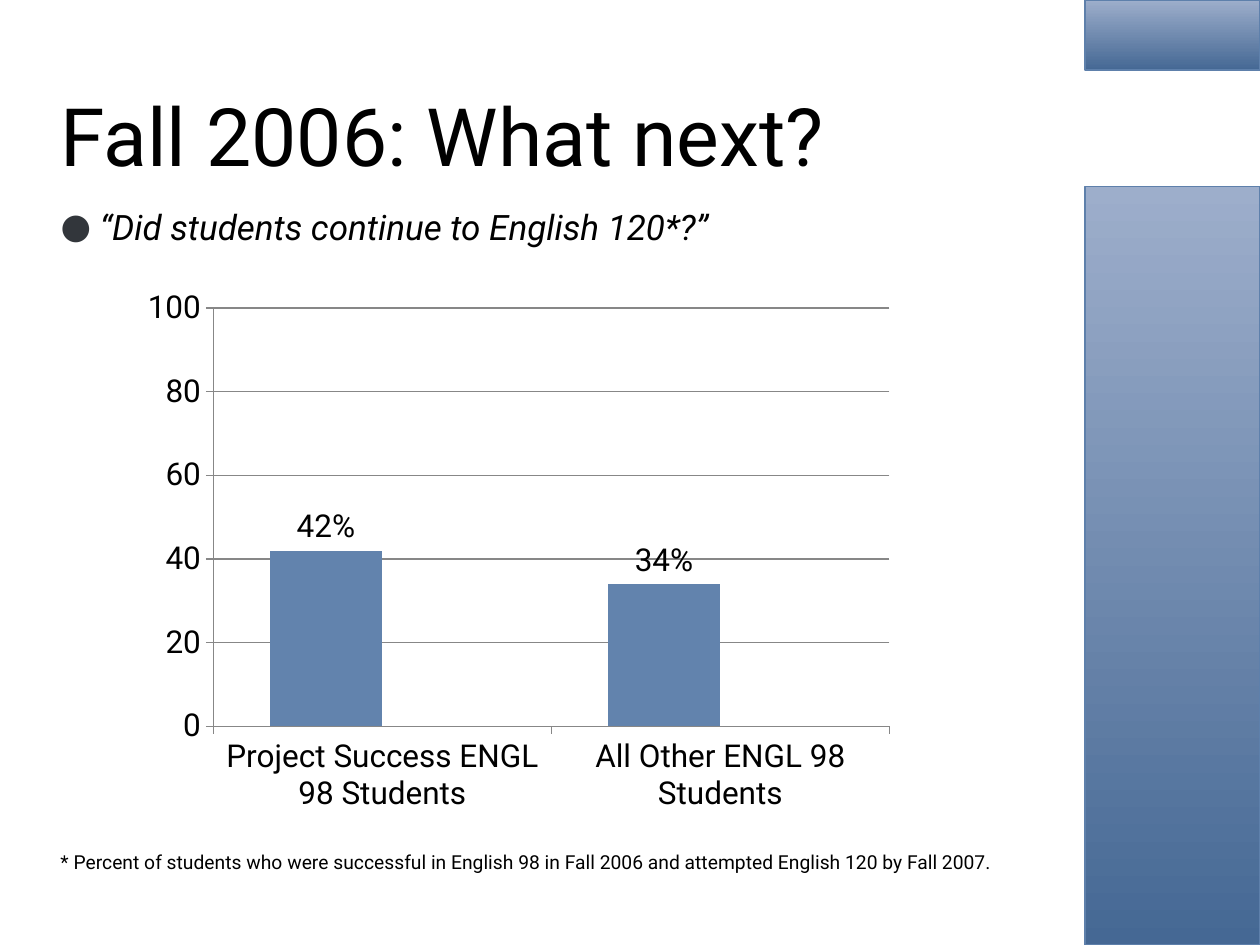
import pptx
import pptx.chart.data
import pptx.dml.color
import pptx.enum.chart
import pptx.enum.shapes
import pptx.enum.text
import pptx.oxml
import pptx.oxml.ns
import pptx.util

Pt = pptx.util.Pt
RGB = pptx.dml.color.RGBColor
Anchor = pptx.enum.text.MSO_ANCHOR

FONT = "Roboto"
BLACK = RGB(0x00, 0x00, 0x00)
DARK = RGB(0x45, 0x68, 0x94)
LIGHT = RGB(0x9D, 0xAE, 0xCB)
EDGE = RGB(0x5E, 0x80, 0xAB)
BAR = RGB(0x62, 0x83, 0xAD)
NAVY = RGB(0x32, 0x49, 0x66)
GRID = RGB(0x87, 0x87, 0x87)

LEFT = 27.5
SIDE = 620


def style(font, size, color=BLACK, italic=False):
    font.name = FONT
    font.size = Pt(size)
    font.color.rgb = color
    font.italic = italic


def dot(para, color, indent):
    """Give a paragraph a round bullet with a hanging indent."""
    props = para._p.get_or_add_pPr()
    props.set("marL", str(Pt(indent)))
    props.set("indent", str(-Pt(indent)))
    space = pptx.oxml.ns.nsdecls("a")
    for xml in (
        f'<a:buClr {space}><a:srgbClr val="{color}"/></a:buClr>',
        f'<a:buFont {space} typeface="{FONT}"/>',
        f'<a:buChar {space} char="●"/>',
    ):
        props.append(pptx.oxml.parse_xml(xml))


def layout(chart, x, y, w, h):
    """Fix the inner plot area, as fractions of the chart."""
    plot = chart._chartSpace.chart.plotArea
    for old in plot.findall(pptx.oxml.ns.qn("c:layout")):
        plot.remove(old)
    parts = "".join(
        f'<c:{key} val="{val}"/>'
        for key, val in (("xMode", "edge"), ("yMode", "edge"),
                         ("x", x), ("y", y), ("w", w), ("h", h))
    )
    plot.insert(0, pptx.oxml.parse_xml(
        f'<c:layout {pptx.oxml.ns.nsdecls("c")}><c:manualLayout>'
        f'<c:layoutTarget val="inner"/>{parts}</c:manualLayout></c:layout>'
    ))


class Deck:
    def __init__(self, width, height):
        self.file = pptx.Presentation()
        self.file.slide_width = Pt(width)
        self.file.slide_height = Pt(height)
        self.slide = self.file.slides.add_slide(self.file.slide_layouts[6])

    def text(self, words, x, y, w, h, size=18, italic=False,
             anchor=Anchor.TOP, top=3.6, bullet=None):
        box = self.slide.shapes.add_textbox(Pt(x), Pt(y), Pt(w), Pt(h))
        frame = box.text_frame
        frame.word_wrap = True
        frame.vertical_anchor = anchor
        frame.margin_top = Pt(top)
        para = frame.paragraphs[0]
        if bullet is not None:
            dot(para, bullet, 22.5)
        run = para.add_run()
        run.text = words
        style(run.font, size, italic=italic)

    def panel(self, x, y, w, h):
        """Add a rectangle that fades from dark at the foot to light."""
        kind = pptx.enum.shapes.MSO_SHAPE.RECTANGLE
        shape = self.slide.shapes.add_shape(kind, Pt(x), Pt(y), Pt(w), Pt(h))
        shape.shadow.inherit = False
        shape.fill.gradient()
        shape.fill.gradient_angle = 90
        for stop, color, place in zip(
                shape.fill.gradient_stops, (DARK, LIGHT), (0, 1)):
            stop.color.rgb = color
            stop.position = place
        shape.line.color.rgb = EDGE
        shape.line.width = Pt(1)

    def bars(self, cats, rows, x, y, w, h):
        """Add a column chart; rows holds (name, values, color)."""
        enum = pptx.enum.chart
        data = pptx.chart.data.CategoryChartData(number_format="0")
        data.categories = cats
        for name, vals, _ in rows:
            data.add_series(name, vals)
        chart = self.slide.shapes.add_chart(
            enum.XL_CHART_TYPE.COLUMN_CLUSTERED,
            Pt(x), Pt(y), Pt(w), Pt(h), data).chart
        chart.has_legend = False
        chart.has_title = False
        style(chart.font, 18)

        plot = chart.plots[0]
        plot.gap_width = 100
        plot.overlap = 0
        plot.vary_by_categories = False
        for line, (_, _, color) in zip(plot.series, rows):
            line.format.fill.solid()
            line.format.fill.fore_color.rgb = color
            line.invert_if_negative = False
        plot.has_data_labels = True
        labels = plot.data_labels
        labels.show_value = True
        labels.number_format = '0"%"'
        labels.number_format_is_linked = False
        labels.position = enum.XL_LABEL_POSITION.OUTSIDE_END
        style(labels.font, 18)

        scale = chart.value_axis
        scale.minimum_scale = 0
        scale.maximum_scale = 100
        scale.major_unit = 20
        scale.has_major_gridlines = True
        scale.major_gridlines.format.line.color.rgb = GRID
        scale.tick_labels.number_format = "0"
        scale.tick_labels.number_format_is_linked = False
        for axis in (scale, chart.category_axis):
            axis.major_tick_mark = enum.XL_TICK_MARK.OUTSIDE
            axis.format.line.color.rgb = GRID
            style(axis.tick_labels.font, 18)
        layout(chart, 0.1, 0.05, 0.88, 0.77)


def main():
    deck = Deck(720, 540)
    deck.text("Fall 2006: What next?", LEFT, 38, 558, 77,
              size=46, anchor=Anchor.MIDDLE)
    deck.text("“Did students continue to English 120*?”",
              LEFT, 93.5, 558, 389, size=20, italic=True, top=24,
              bullet=RGB(0x32, 0x36, 0x3B))
    for top, end in ((106.5, 540), (0, 40)):
        deck.panel(SIDE, top, 720 - SIDE, end - top)
    deck.bars(
        ["Project Success ENGL 98 Students", "All Other ENGL 98 Students"],
        [("Series 1", (42, 34), BAR), ("Series 2", (None, None), NAVY)],
        78, 160.5, 439, 310.5)
    deck.text("* Percent of students who were successful in English 98 in "
              "Fall 2006 and attempted English 120 by Fall 2007.",
              LEFT, 482.5, 568, 20.5, size=11)
    deck.file.save("out.pptx")


if __name__ == "__main__":
    main()
